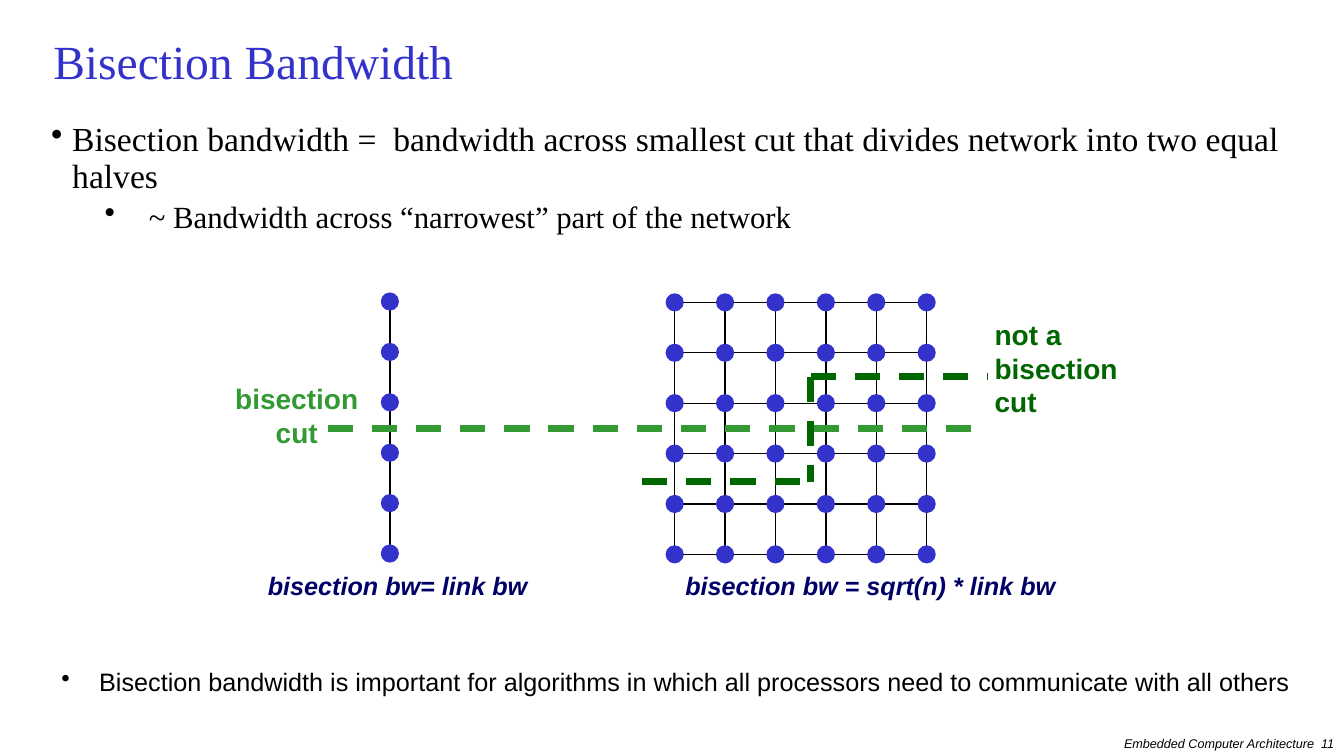
from lxml import etree
from pptx import Presentation
from pptx.dml.color import RGBColor
from pptx.enum import dml, shapes, text
from pptx.oxml.ns import qn
from pptx.util import Pt

BLACK = RGBColor(0x00, 0x00, 0x00)
BLUE = RGBColor(0x33, 0x33, 0xCC)
NAVY = RGBColor(0x00, 0x00, 0x66)
LIME = RGBColor(0x33, 0x99, 0x33)
GREEN = RGBColor(0x00, 0x66, 0x00)
SERIF, SANS = "Times New Roman", "Arial"
LEFT, MID, RIGHT = text.PP_ALIGN.LEFT, text.PP_ALIGN.CENTER, text.PP_ALIGN.RIGHT

deck = Presentation()
deck.slide_width, deck.slide_height = Pt(960), Pt(540)
slide = deck.slides.add_slide(deck.slide_layouts[6])


def write(box, rows, face, color, align=LEFT, bold=False, slant=False,
          pad=(7.2, 3.6), lead=None, gap=0):
    """Add a text box; each row is (words, size, bullet), bullet being
    None or (left margin, hanging indent)."""
    frame = slide.shapes.add_textbox(*map(Pt, box)).text_frame
    frame.word_wrap = True
    frame.margin_left = frame.margin_right = Pt(pad[0])
    frame.margin_top = frame.margin_bottom = Pt(pad[1])
    for i, (words, size, bullet) in enumerate(rows):
        para = frame.add_paragraph() if i else frame.paragraphs[0]
        para.text = words
        para.alignment = align
        para.line_spacing = lead
        para.space_before = Pt(round(gap * size, 1))
        font = para.font
        font.name, font.size, font.bold, font.italic = face, Pt(size), bold, slant
        font.color.rgb = color
        if bullet:
            props = para._p.get_or_add_pPr()
            props.set("marL", str(Pt(bullet[0])))
            props.set("indent", str(-Pt(bullet[1])))
            # Bullet elements must precede the paragraph's default run format
            mark = etree.Element(qn("a:buChar"))
            mark.set("char", "•")
            props.find(qn("a:defRPr")).addprevious(mark)
    return frame


def draw(ends, color=BLACK, width=1, dash=None):
    """Add a straight line from (x1, y1) to (x2, y2)."""
    line = slide.shapes.add_connector(shapes.MSO_CONNECTOR.STRAIGHT, *map(Pt, ends))
    line.line.color.rgb = color
    line.line.width = Pt(width)
    line.line.dash_style = dash
    etree.SubElement(line._element.spPr, qn("a:effectLst"))


# Headings
write((684, 522, 276, 18), [("Embedded Computer Architecture  11", 9, None)],
      SANS, BLACK, RIGHT, slant=True)
title = write((31, 18, 897, 57.6), [("Bisection Bandwidth", 34, None)],
              SERIF, BLUE, lead=0.8)
title.vertical_anchor = text.MSO_ANCHOR.MIDDLE
write((29.5, 84.2, 901.5, 100), [
    ("Bisection bandwidth =  bandwidth across smallest cut that divides "
     "network into two equal halves", 24, (15, 15)),
    ("~ Bandwidth across “narrowest” part of the network", 22, (69.7, 31.5)),
], SERIF, BLACK, lead=0.9, gap=0.2)

# Mesh and chain: lines first, then nodes
COUNT, STEP, DOT = 6, 36, 12
SIDE = (COUNT - 1) * STEP
gx, gy, cx, cy = 481.9, 216, 278.5, 215.4

mesh = slide.shapes.add_shape(shapes.MSO_SHAPE.RECTANGLE, Pt(gx), Pt(gy), Pt(SIDE), Pt(SIDE))
mesh.shadow.inherit = False
mesh.fill.background()
mesh.line.color.rgb = BLACK
mesh.line.width = Pt(1)
for k in range(1, COUNT - 1):
    x, y = gx + k * STEP, gy + k * STEP
    draw((x, gy, x, gy + SIDE))
    draw((gx, y, gx + SIDE, y))
draw((cx, cy, cx, cy + SIDE))

nodes = [(gx + c * STEP, gy + r * STEP) for r in range(COUNT) for c in range(COUNT)]
nodes += [(cx, cy + r * STEP) for r in range(COUNT)]
for x, y in nodes:
    node = slide.shapes.add_shape(shapes.MSO_SHAPE.OVAL, Pt(x - DOT / 2),
                                  Pt(y - DOT / 2), Pt(DOT), Pt(DOT))
    node.shadow.inherit = False
    node.fill.solid()
    node.fill.fore_color.rgb = BLUE
    node.line.color.rgb = BLUE
    node.line.width = Pt(1)

# Cuts
for ends, color in [
    ((234, 306, 705.6, 306), LIME),
    ((458.6, 344, 579, 344), GREEN),
    ((579, 269, 705.6, 269), GREEN),
    ((579, 269, 579, 344), GREEN),
]:
    draw(ends, color, 4.5, dml.MSO_LINE.DASH)

# Labels
write((158, 269.3, 108, 55.4), [("bisection", 20, None), ("cut", 20, None)],
      SANS, LIME, MID, bold=True)
write((703.4, 223.2, 116, 79.2),
      [(word, 20, None) for word in ("not a", "bisection", "cut")],
      SANS, GREEN, bold=True)
for left, width, words in [
    (146.9, 274.3, "bisection bw= link bw"),
    (449.3, 344.9, "bisection bw = sqrt(n) * link bw"),
]:
    write((left, 405.4, width, 26), [(words, 18, None)], SANS, NAVY, MID,
          bold=True, slant=True, pad=(5, 2.2), gap=0.2)
write((38.9, 473.8, 895, 26), [
    ("Bisection bandwidth is important for algorithms in which all processors "
     "need to communicate with all others", 18, (27, 27)),
], SANS, BLACK, pad=(5, 2.2), gap=0.2)

deck.save("out.pptx")
